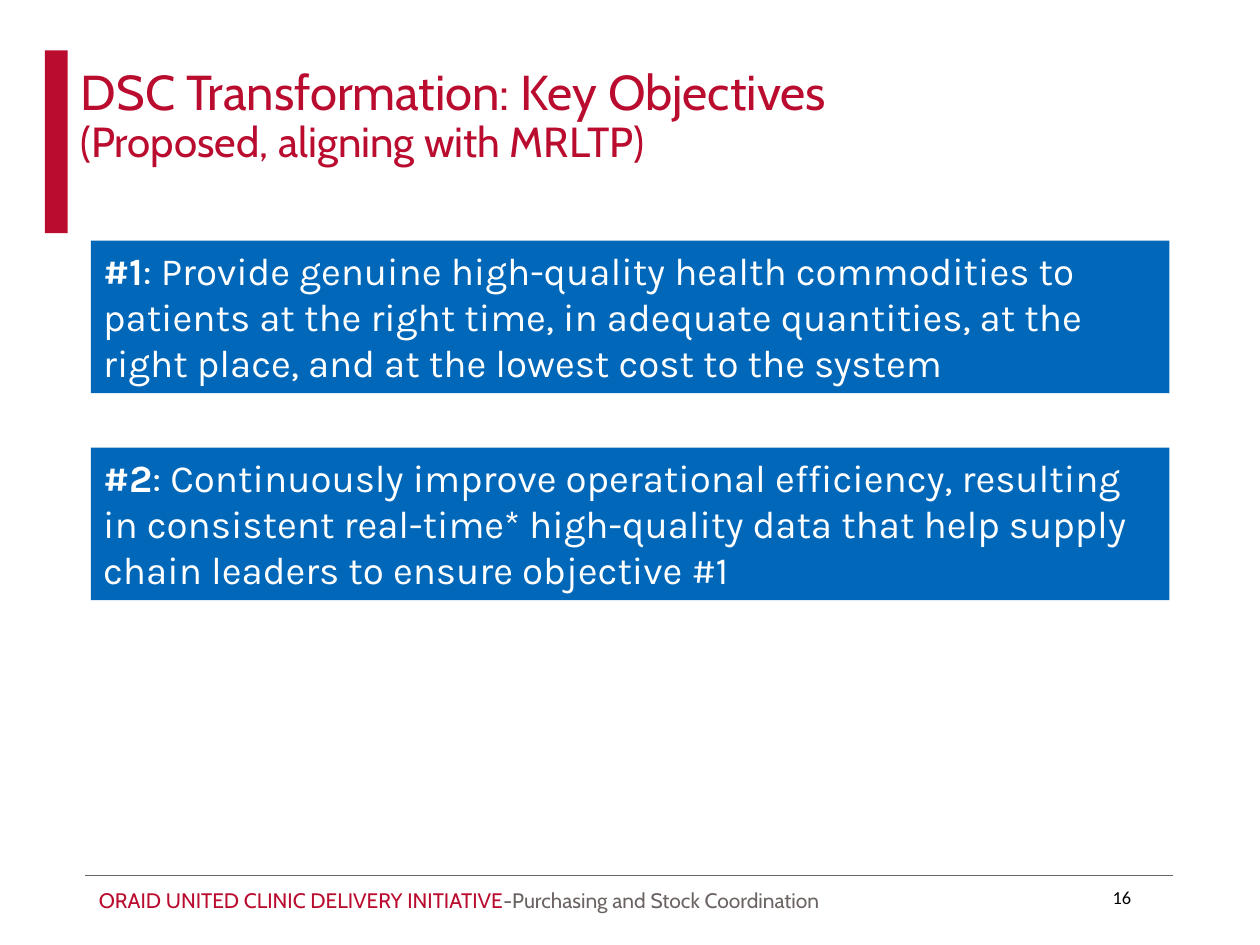
from lxml.etree import SubElement
from pptx import Presentation
from pptx.dml.color import RGBColor
from pptx.enum.shapes import MSO_CONNECTOR, MSO_SHAPE
from pptx.enum.text import MSO_ANCHOR, MSO_AUTO_SIZE, PP_ALIGN
from pptx.oxml.ns import qn
from pptx.util import Pt

RED = RGBColor(0xBA, 0x0C, 0x2F)
BLUE = RGBColor(0x00, 0x67, 0xB9)
GRAY = RGBColor(0x6C, 0x64, 0x63)
WHITE = RGBColor(0xFF, 0xFF, 0xFF)
BLACK = RGBColor(0x00, 0x00, 0x00)

OBJECTIVES = [
    ("#1", ": Provide genuine high-quality health commodities to patients at the "
           "right time, in adequate quantities, at the right place, and at the "
           "lowest cost to the system"),
    ("#2", ": Continuously improve operational efficiency, resulting in consistent "
           "real-time* high-quality data that help supply chain leaders to ensure "
           "objective #1"),
]


def add_run(p, text, size, font, color, bold=False):
    """Append a formatted run to a paragraph."""
    r = p.add_run()
    r.text = text
    r.font.size = Pt(size)
    r.font.name = font
    r.font.color.rgb = color
    r.font.bold = bold


def set_frame(tf, anchor=MSO_ANCHOR.TOP, margin_x=7.2, margin_y=3.6):
    """Set wrapping, anchor and margins, and return the first paragraph."""
    tf.word_wrap = True
    tf.auto_size = MSO_AUTO_SIZE.SHAPE_TO_FIT_TEXT
    tf.vertical_anchor = anchor
    tf.margin_left = tf.margin_right = Pt(margin_x)
    tf.margin_top = tf.margin_bottom = Pt(margin_y)
    p = tf.paragraphs[0]
    p.alignment = PP_ALIGN.LEFT
    return p


def add_rect(s, x, y, w, h, color):
    """Add a plain filled rectangle."""
    sp = s.shapes.add_shape(MSO_SHAPE.RECTANGLE, Pt(x), Pt(y), Pt(w), Pt(h))
    sp.shadow.inherit = False
    sp.fill.solid()
    sp.fill.fore_color.rgb = color
    sp.line.fill.background()
    return sp


def add_header(s, x, y, w, h):
    """Place the accent bar and the two-line title."""
    add_rect(s, x, y, 13, h, RED)
    title = s.shapes.title
    title.left, title.top = Pt(x + 13.4), Pt(y + 6)
    title.width, title.height = Pt(w - 13.4), Pt(64)
    tf = title.text_frame
    first = set_frame(tf, MSO_ANCHOR.MIDDLE)
    second = tf.add_paragraph()
    lines = [(first, "DSC Transformation: Key Objectives", 28),
             (second, "(Proposed, aligning with MRLTP)", 24)]
    for p, text, size in lines:
        p.alignment = PP_ALIGN.LEFT
        p.line_spacing = 0.9
        add_run(p, text, size, "Cabin", RED)


def add_objectives(s, x, y, w, h, gap):
    """Stack one blue panel per objective."""
    for i, (label, text) in enumerate(OBJECTIVES):
        sp = add_rect(s, x, y + i * (h + gap), w, h, BLUE)
        p = set_frame(sp.text_frame)
        add_run(p, label, 22, "Karla", WHITE, True)
        add_run(p, text, 22, "Karla", WHITE)


def add_footer(s, x, y, w):
    """Place the rule, the program name and the page number."""
    rule = s.shapes.add_connector(MSO_CONNECTOR.STRAIGHT, Pt(x), Pt(y), Pt(x + w), Pt(y))
    rule.line.color.rgb = GRAY
    rule.line.width = Pt(0.5)
    SubElement(rule._element.spPr, qn("a:effectLst"))

    program = s.shapes.add_textbox(Pt(x + 0.6), Pt(y + 3.3), Pt(536), Pt(21.6))
    p = set_frame(program.text_frame)
    add_run(p, "ORAID UNITED CLINIC DELIVERY INITIATIVE", 12, "Cabin", RED)
    add_run(p, "-Purchasing and Stock Coordination", 12, "Cabin", GRAY)

    number = s.shapes.add_textbox(Pt(x + 582), Pt(y + 3.3), Pt(24.5), Pt(18))
    p = set_frame(number.text_frame, margin_x=5, margin_y=2.9)
    add_run(p, "16", 10.5, "Calibri", BLACK)


def main():
    """Build and save the slide."""
    prs = Presentation()
    prs.slide_width, prs.slide_height = Pt(720), Pt(540)
    s = prs.slides.add_slide(prs.slide_layouts[5])
    add_header(s, 25.6, 28.8, 680, 104.4)
    add_objectives(s, 51.9, 137.5, 616.3, 87.1, 31.2)
    add_footer(s, 48.8, 500.4, 621.6)
    prs.save("out.pptx")


if __name__ == "__main__":
    main()
